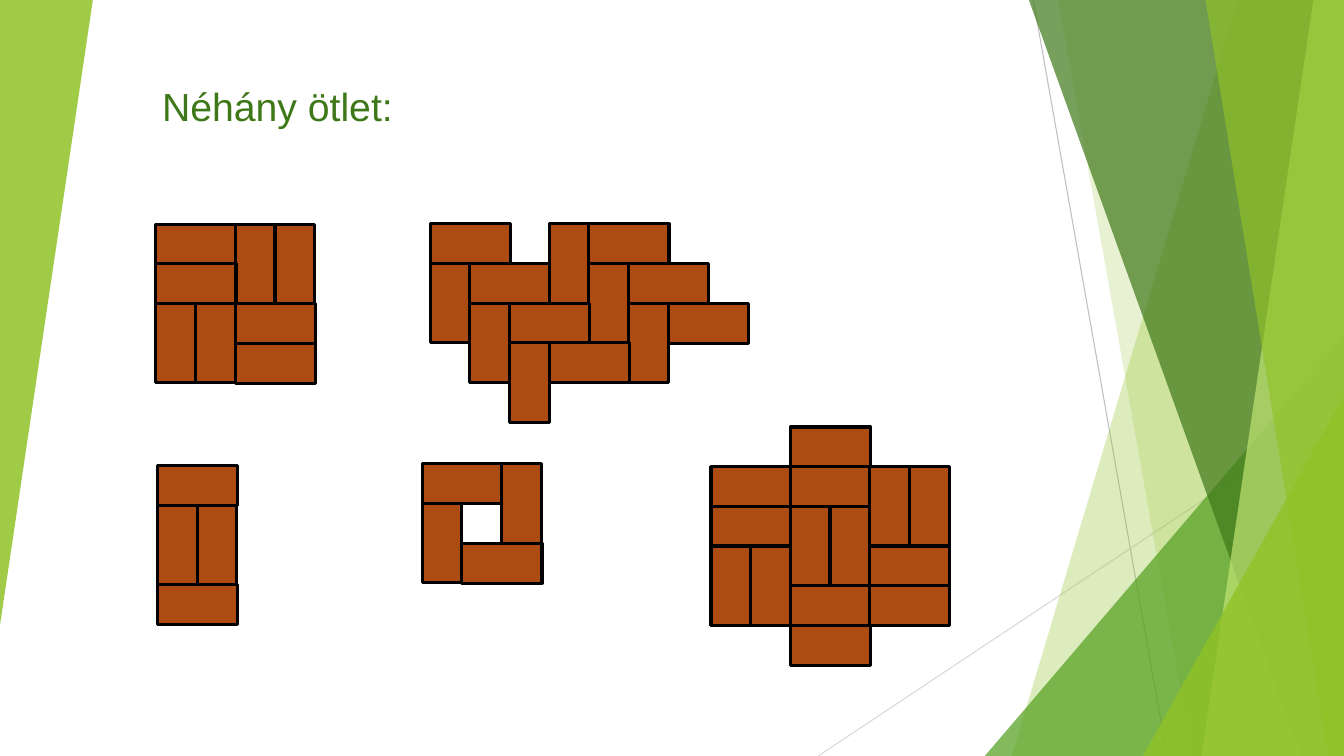
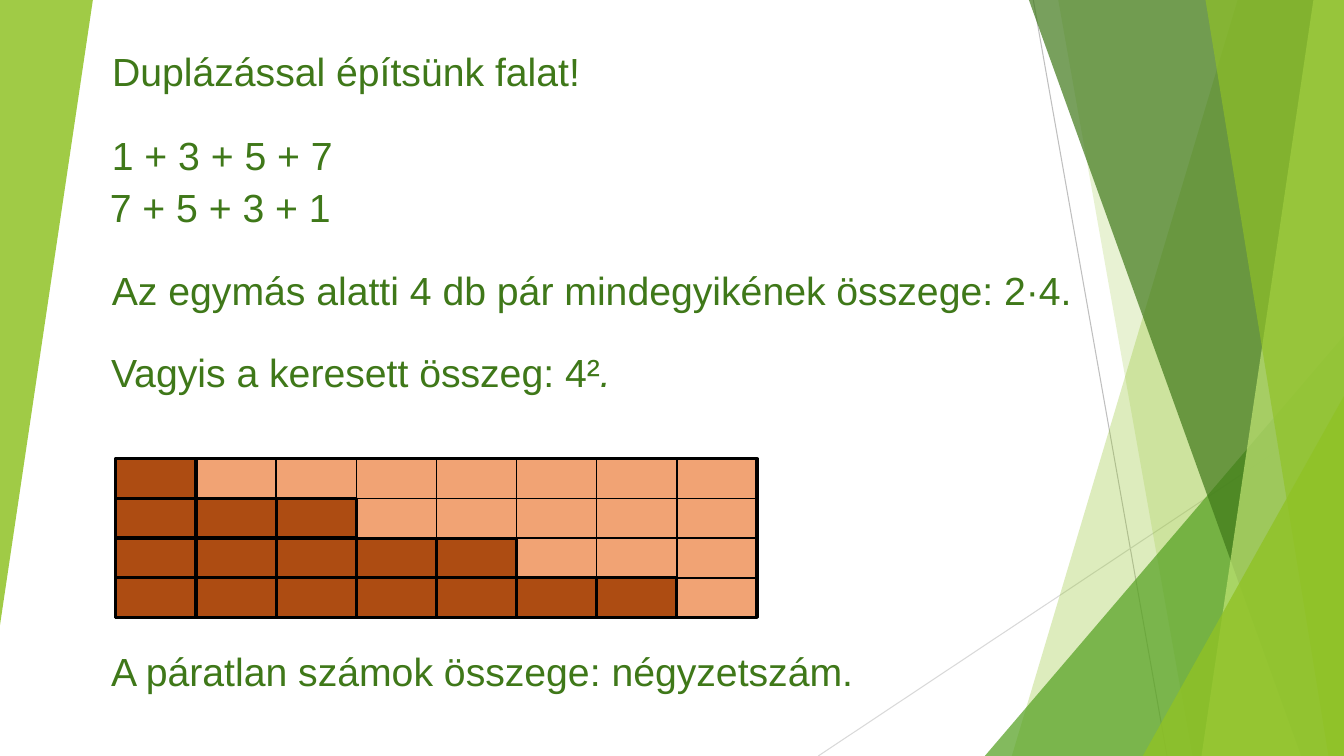
from dataclasses import dataclass

from lxml.etree import SubElement
from pptx import Presentation
from pptx.dml.color import RGBColor
from pptx.enum.shapes import MSO_CONNECTOR, MSO_SHAPE
from pptx.enum.text import MSO_ANCHOR, MSO_AUTO_SIZE, PP_ALIGN
from pptx.oxml.ns import qn
from pptx.shapes.autoshape import Shape
from pptx.shapes.connector import Connector
from pptx.slide import Slide, SlideLayout
from pptx.util import Cm, Pt

PAGE_WIDTH, PAGE_HEIGHT = 33.87, 19.05
FONT = "Arial"
BLACK, GREEN, DARK_GREEN = "000000", "90C226", "3F7819"
BRICK, PALE_BRICK = "AD4C12", "F1A374"
TEXT_HEIGHT = 1.62


@dataclass(frozen=True)
class Band:
    """A band from the top to the bottom edge, filled to the right edge."""
    top_x: float
    foot_x: float
    color: str
    opacity: int


@dataclass(frozen=True)
class Triangle:
    left: float
    top: float
    width: float
    height: float
    color: str
    opacity: int
    rotation: int = 0


@dataclass(frozen=True)
class Pattern:
    """Bricks on a 1 cm grid: H lies and V stands, marked at its top left cell."""
    left: float
    top: float
    rows: tuple[str, ...]


@dataclass(frozen=True)
class TextLine:
    left: float
    top: float
    text: str
    italic_end: str = ""


DECORATION = (
    Band(31.19, 25.5, GREEN, 30),
    Band(26.67, 30.05, GREEN, 20),
    Triangle(24.82, 8.46, 9.05, 10.59, "54A021", 72),
    Band(25.93, 32.79, DARK_GREEN, 70),
    Band(33.1, 30.28, "C0E474", 70),
    Band(30.38, 33.48, GREEN, 65),
    Triangle(28.8, 9.98, 5.07, 9.07, GREEN, 80),
    Triangle(0, 0, 2.34, 15.75, GREEN, 85, rotation=180),
)

PATTERNS = (
    Pattern(3.93, 5.65, ("H.VV", "H...", "VVH.", "..H.")),
    Pattern(10.84, 5.64, ("H..VH.", "VH..VH.", ".VH..VH.", "..VH.")),
    Pattern(3.97, 11.73, ("H.", "VV", "..", "H.")),
    Pattern(10.64, 11.69, ("H.V", "V..", ".H.")),
    Pattern(17.92, 10.76, ("..H.", "H.H.VV", "H.VV..", "VV..H.", "..H.H.", "..H.")),
)
BRICK_SIZES = {"H": (2.02, 1.01), "V": (1, 2)}

WALL_LEFT, WALL_TOP = 2.92, 11.56
WALL_COLUMNS, WALL_ROWS = 8, 4
CELL_WIDTH, CELL_HEIGHT = 2.02, 1

WALL_TITLE = TextLine(2.57, 0.98, "Duplázással építsünk falat!")
WALL_TEXTS = (
    TextLine(2.57, 3.08, "1 + 3 + 5 + 7"),
    TextLine(2.52, 4.41, "7 + 5 + 3 + 1"),
    TextLine(2.57, 6.49, "Az egymás alatti 4 db pár mindegyikének összege: 2·4."),
    TextLine(2.55, 8.55, "Vagyis a keresett összeg: 4²", italic_end="."),
    TextLine(2.55, 16.1, "A páratlan számok összege: négyzetszám."),
)


def rgb(color: str) -> RGBColor:
    return RGBColor.from_string(color)


def paint(shape: Shape, color: str, *, opacity: int = 100, line_width: float = 0) -> None:
    shape.shadow.inherit = False
    shape.fill.solid()
    shape.fill.fore_color.rgb = rgb(color)
    if opacity < 100:
        fill_color = shape.element.spPr.find(".//" + qn("a:srgbClr"))
        SubElement(fill_color, qn("a:alpha")).set("val", str(opacity * 1000))
    if line_width:
        shape.line.color.rgb = rgb(BLACK)
        shape.line.width = Pt(line_width)
    else:
        shape.line.fill.background()


def add_line(page: Slide, start: tuple[float, float], end: tuple[float, float], *,
             color: str, width: float) -> Connector:
    line = page.shapes.add_connector(
        MSO_CONNECTOR.STRAIGHT, Cm(start[0]), Cm(start[1]), Cm(end[0]), Cm(end[1]))
    line.line.color.rgb = rgb(color)
    line.line.width = Pt(width)
    SubElement(line.element.spPr, qn("a:effectLst"))
    return line


def add_block(page: Slide, left: float, top: float, width: float, height: float,
              color: str = BRICK) -> Shape:
    block = page.shapes.add_shape(
        MSO_SHAPE.RECTANGLE, Cm(left), Cm(top), Cm(width), Cm(height))
    paint(block, color, line_width=2.25)
    return block


def add_band(page: Slide, band: Band) -> Shape:
    builder = page.shapes.build_freeform(Cm(band.top_x), 0)
    builder.add_line_segments([
        (Cm(PAGE_WIDTH), 0),
        (Cm(PAGE_WIDTH), Cm(PAGE_HEIGHT)),
        (Cm(band.foot_x), Cm(PAGE_HEIGHT)),
    ])
    shape = builder.convert_to_shape()
    paint(shape, band.color, opacity=band.opacity)
    return shape


def add_triangle(page: Slide, triangle: Triangle) -> Shape:
    shape = page.shapes.add_shape(
        MSO_SHAPE.ISOSCELES_TRIANGLE, Cm(triangle.left), Cm(triangle.top),
        Cm(triangle.width), Cm(triangle.height))
    shape.adjustments[0] = 1
    shape.rotation = triangle.rotation
    paint(shape, triangle.color, opacity=triangle.opacity)
    return shape


def decorate_layout(layout: SlideLayout, page: Slide) -> None:
    """Draw the decoration on the page, then move it behind the layout's placeholders."""
    parts = [
        add_line(page, (26.04, 0), (29.41, PAGE_HEIGHT), color="BFBFBF", width=0.75),
        add_line(page, (PAGE_WIDTH, 10.24), (20.62, PAGE_HEIGHT), color="D9D9D9", width=0.75),
    ]
    for item in DECORATION:
        draw = add_band if isinstance(item, Band) else add_triangle
        parts.append(draw(page, item))
    for index, part in enumerate(parts):
        part.element.xpath(".//p:cNvPr")[0].set("id", str(100 + index))
        layout.shapes.element.insert(2 + index, part.element)


def write_text(box: Shape, text: str, *, italic_end: str = "", size: float = 28,
               color: str = DARK_GREEN) -> None:
    frame = box.text_frame
    frame.word_wrap = True
    frame.auto_size = MSO_AUTO_SIZE.NONE
    frame.vertical_anchor = MSO_ANCHOR.MIDDLE
    para = frame.paragraphs[0]
    para.alignment = PP_ALIGN.LEFT
    for content, italic in ((text, False), (italic_end, True)):
        if content:
            span = para.add_run()
            span.text = content
            span.font.name = FONT
            span.font.size = Pt(size)
            span.font.italic = italic
            span.font.color.rgb = rgb(color)


def set_title(page: Slide, line: TextLine) -> None:
    title = page.shapes.title
    title.left, title.top = Cm(line.left), Cm(line.top)
    title.width, title.height = Cm(22), Cm(TEXT_HEIGHT)
    write_text(title, line.text)


def add_text(page: Slide, line: TextLine) -> None:
    box = page.shapes.add_textbox(Cm(line.left), Cm(line.top), Cm(30), Cm(TEXT_HEIGHT))
    write_text(box, line.text, italic_end=line.italic_end)


def add_pattern(page: Slide, pattern: Pattern) -> None:
    for row, cells in enumerate(pattern.rows):
        for column, cell in enumerate(cells):
            if cell in BRICK_SIZES:
                add_block(page, pattern.left + column, pattern.top + row, *BRICK_SIZES[cell])


def wall_point(column: int, row: int) -> tuple[float, float]:
    return WALL_LEFT + column * CELL_WIDTH, WALL_TOP + row * CELL_HEIGHT


def add_wall(page: Slide) -> None:
    """Build stairs of 1, 3, 5 and 7 bricks, and rule the rest of the wall into cells."""
    wall = add_block(page, WALL_LEFT, WALL_TOP, WALL_COLUMNS * CELL_WIDTH,
                     WALL_ROWS * CELL_HEIGHT, PALE_BRICK)
    for row in range(WALL_ROWS):
        for column in range(2 * row + 1):
            add_block(page, *wall_point(column, row), CELL_WIDTH, CELL_HEIGHT)
    for column in range(2, WALL_COLUMNS):
        line = add_line(page, wall_point(column, 0), wall_point(column, column // 2),
                        color=BLACK, width=1)
        if 2 * column == WALL_COLUMNS:
            line.begin_connect(wall, 0)
    for row in range(1, WALL_ROWS):
        line = add_line(page, wall_point(2 * row + 1, row), wall_point(WALL_COLUMNS, row),
                        color=BLACK, width=1)
        if 2 * row == WALL_ROWS:
            line.end_connect(wall, 3)


def main() -> None:
    deck = Presentation()
    deck.slide_width, deck.slide_height = Cm(PAGE_WIDTH), Cm(PAGE_HEIGHT)
    layout = deck.slide_layouts.get_by_name("Title Only")

    ideas = deck.slides.add_slide(layout)
    decorate_layout(layout, ideas)
    set_title(ideas, TextLine(3.83, 1.85, "Néhány ötlet:"))
    for pattern in PATTERNS:
        add_pattern(ideas, pattern)

    doubling = deck.slides.add_slide(layout)
    set_title(doubling, WALL_TITLE)
    for line in WALL_TEXTS:
        add_text(doubling, line)
    add_wall(doubling)

    deck.save("out.pptx")


if __name__ == "__main__":
    main()
